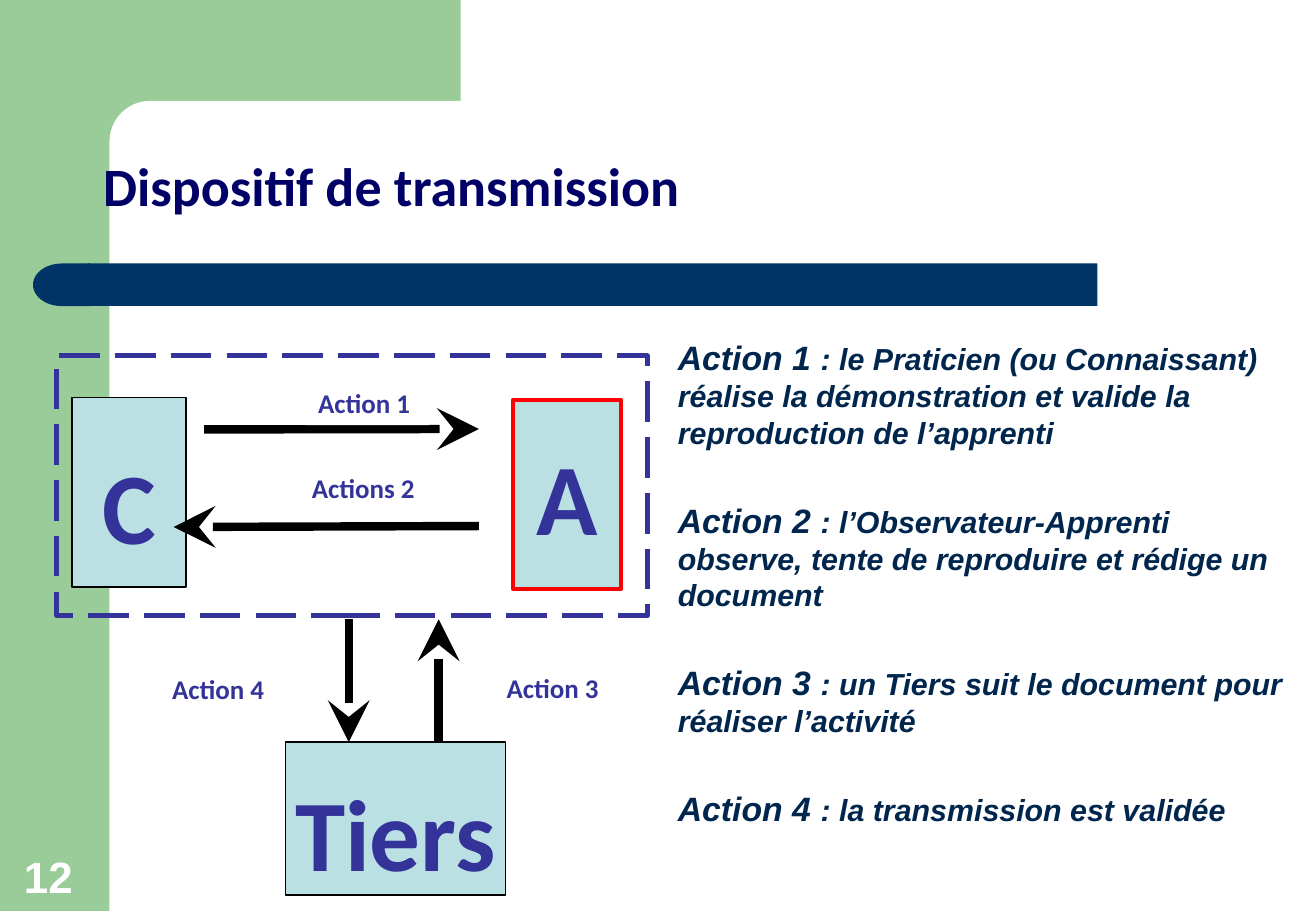
from lxml import etree
from pptx import Presentation
from pptx.dml.color import RGBColor
from pptx.enum.dml import MSO_LINE
from pptx.enum.shapes import MSO_CONNECTOR, MSO_SHAPE
from pptx.enum.text import MSO_ANCHOR, PP_ALIGN
from pptx.oxml.ns import qn
from pptx.util import Cm, Pt

RECT = MSO_SHAPE.RECTANGLE
ROUNDED = MSO_SHAPE.ROUNDED_RECTANGLE
DELAY = MSO_SHAPE.FLOWCHART_DELAY
STRAIGHT = MSO_CONNECTOR.STRAIGHT
LONG_DASH = MSO_LINE.LONG_DASH
TOP, MIDDLE, BOTTOM = MSO_ANCHOR.TOP, MSO_ANCHOR.MIDDLE, MSO_ANCHOR.BOTTOM
LEFT, CENTER = PP_ALIGN.LEFT, PP_ALIGN.CENTER

GREEN, NAVY, WHITE, BLACK = "99CC99", "003366", "FFFFFF", "000000"
PALE, INDIGO, RED = "BBE0E3", "333399", "FF0000"
TITLE_BLUE, TEXT_BLUE = "000066", "00264D"

TITLE = "Dispositif de transmission"
PAGE = "12"
ACTIONS = [
    ("Action 1 ", ": le Praticien (ou Connaissant) réalise la démonstration "
                  "et valide la reproduction de l’apprenti"),
    ("Action 2 ", ": l’Observateur-Apprenti observe, tente de reproduire "
                  "et rédige un document"),
    ("Action 3 ", ": un Tiers suit le document pour réaliser l’activité"),
    ("Action 4 ", ": la transmission est validée"),
]
DECOR = [
    (RECT, (0, 0, 2.29, 19.05), GREEN),
    (RECT, (2.06, 0, 7.57, 2.97), GREEN),
    (ROUNDED, (2.29, 2.11, 15.37, 1.7), WHITE),
    (RECT, (1.83, 5.51, 21.11, 0.89), NAVY),
    (DELAY, (0.69, 5.51, 1.19, 0.89), NAVY),
]
ACTORS = [
    ("A", (10.72, 8.36, 2.26, 3.96), RED, 2.25, 0.13),
    ("Tiers", (5.97, 15.52, 4.6, 3.2), BLACK, 1, 0.64),
    ("C", (1.5, 8.31, 2.39, 3.96), BLACK, 1, 0.64),
]
ARROWS = [
    (7.29, 12.95, 7.29, 15.52),
    (9.17, 15.52, 9.17, 12.95),
    (4.27, 8.98, 10.01, 8.97),
    (10.01, 11, 3.63, 11.02),
]
LABELS = [
    ("Action 1", 6.4, 7.95, 2.57),
    ("Actions 2", 6.27, 9.73, 2.92),
    ("Action 3", 10.34, 13.92, 2.79),
    ("Action 4", 3.35, 13.94, 2.49),
]
LABEL_HEIGHT = 0.94
FRAME = (1.19, 7.44, 12.34, 5.44)


def rgb(value):
    return RGBColor.from_string(value)


def cm(lengths):
    return [Cm(length) for length in lengths]


def style(font, name, size, color):
    font.name, font.size, font.bold = name, Pt(size), True
    font.color.rgb = rgb(color)


def add_block(kind, place, fill=None, line=None, width=1):
    block = slide.shapes.add_shape(kind, *cm(place))
    block.shadow.inherit = False
    if fill:
        block.fill.solid()
        block.fill.fore_color.rgb = rgb(fill)
    else:
        block.fill.background()
    if line:
        block.line.color.rgb = rgb(line)
        block.line.width = Pt(width)
    else:
        block.line.fill.background()
    return block


def write(holder, text, name, size, color, anchor, align=LEFT, wrap=True):
    frame = holder.text_frame
    frame.text = text
    frame.word_wrap = wrap
    frame.vertical_anchor = anchor
    paragraph = frame.paragraphs[0]
    paragraph.alignment = align
    style(paragraph.font, name, size, color)
    return frame


def add_arrow(ends):
    arrow = slide.shapes.add_connector(STRAIGHT, *cm(ends))
    arrow.line.color.rgb = rgb(BLACK)
    arrow.line.width = Pt(5)
    etree.SubElement(arrow.line._get_or_add_ln(), qn("a:tailEnd"),
                     type="stealth", w="lg", len="lg")
    etree.SubElement(arrow.element.spPr, qn("a:effectLst"))


deck = Presentation()
deck.slide_width, deck.slide_height = cm((27.51, 19.05))
slide = deck.slides.add_slide(deck.slide_layouts[5])

for kind, place, color in DECOR:
    block = add_block(kind, place, color)
    if kind == ROUNDED:
        block.adjustments[0] = 0.5
    if kind == DELAY:
        block.rotation = 180

title = slide.shapes.title
title.left, title.top, title.width, title.height = cm((1.9, 1.02, 23.72, 3.68))
write(title, TITLE, "Calibri", 32, TITLE_BLUE, BOTTOM)
title.text_frame.paragraphs[0].line_spacing = 0.9
slide.shapes.element.append(title.element)

explanation = slide.shapes.add_textbox(*cm((13.92, 7.05, 13.23, 10.5))).text_frame
explanation.word_wrap = True
explanation.vertical_anchor = TOP
explanation.margin_top = explanation.margin_bottom = 0
for index, (heading, detail) in enumerate(ACTIONS):
    paragraph = explanation.add_paragraph() if index else explanation.paragraphs[0]
    if index:
        paragraph.space_before = Pt(29)
    style(paragraph.font, "Arial", 18, TEXT_BLUE)
    paragraph.font.italic = True
    lead = paragraph.add_run()
    lead.text = heading
    lead.font.size = Pt(20)
    paragraph.add_run().text = detail

page = slide.shapes.add_textbox(*cm((0.25, 16.51, 1.78, 2.49)))
write(page, PAGE, "Arial", 26, WHITE, BOTTOM)

for name, place, line, width, inset in ACTORS:
    actor = add_block(RECT, place, PALE, line, width)
    write(actor, name, "Calibri", 60, INDIGO, MIDDLE, CENTER, False).margin_top = Cm(inset)

for ends in ARROWS:
    add_arrow(ends)

for text, left, top, width in LABELS:
    label = add_block(RECT, (left, top, width, LABEL_HEIGHT), WHITE)
    write(label, text, "Calibri", 16, INDIGO, TOP)

add_block(RECT, FRAME, None, INDIGO, 3).line.dash_style = LONG_DASH

deck.save("out.pptx")
